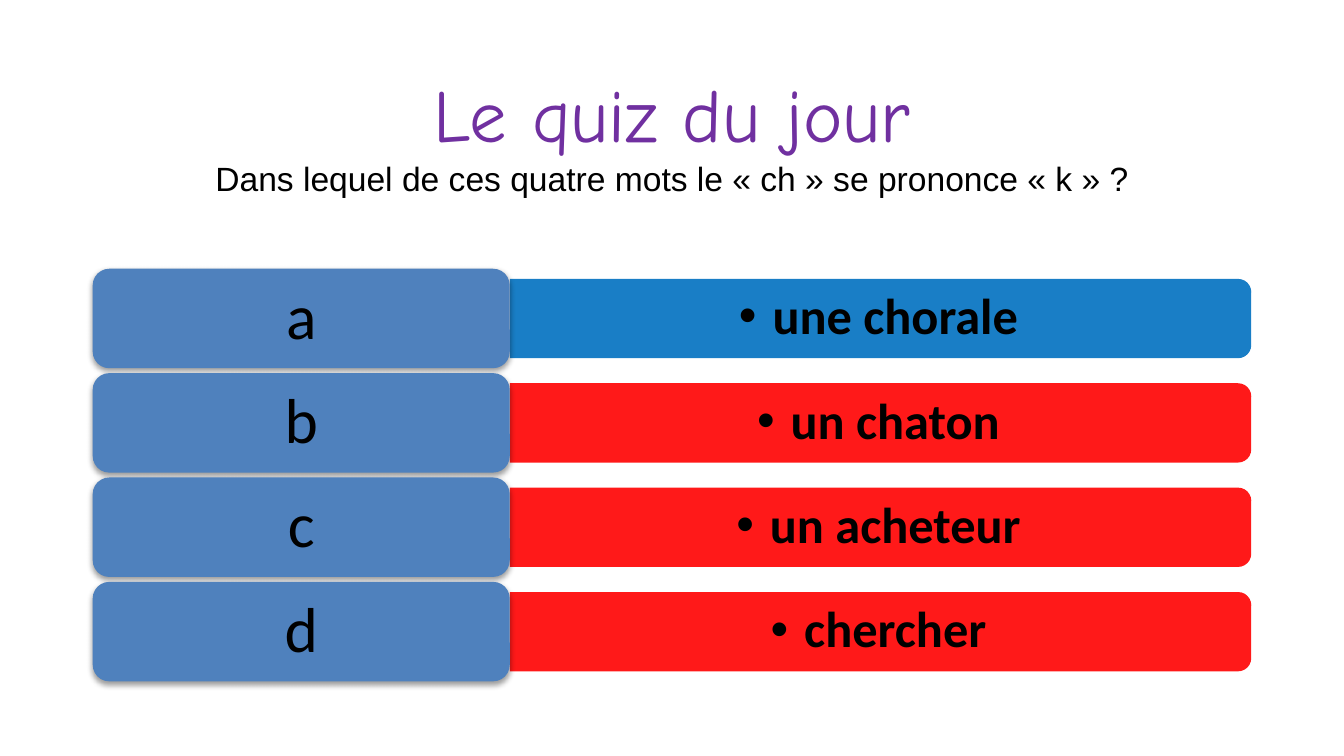
from lxml.etree import SubElement
from pptx import Presentation
from pptx.dml.color import RGBColor
from pptx.enum.shapes import MSO_SHAPE
from pptx.enum.text import MSO_ANCHOR, PP_ALIGN
from pptx.oxml.ns import qn
from pptx.util import Inches, Pt

PURPLE = RGBColor(0x70, 0x30, 0xA0)
BLACK = RGBColor(0, 0, 0)
STEEL = RGBColor(0x4F, 0x81, 0xBD)
BLUE = RGBColor(0, 0x70, 0xC0)
RED = RGBColor(0xFF, 0, 0)

WORDS = [
    ("a", "une chorale", BLUE),
    ("b", "un chaton", RED),
    ("c", "un acheteur", RED),
    ("d", "chercher", RED),
]


def add_block(slide, kind, box, color):
    block = slide.shapes.add_shape(kind, *map(Inches, box))
    block.shadow.inherit = False
    block.fill.solid()
    block.fill.fore_color.rgb = color
    block.line.fill.background()
    return block


def style_run(run, font, size, color=BLACK, bold=False):
    run.font.name = font
    run.font.size = Pt(size)
    run.font.color.rgb = color
    run.font.bold = bold


def set_text(shape, text, margin):
    frame = shape.text_frame
    frame.word_wrap = True
    frame.vertical_anchor = MSO_ANCHOR.MIDDLE
    frame.margin_left = frame.margin_right = Inches(margin)
    frame.margin_top = frame.margin_bottom = Inches(margin / 2)
    para = frame.paragraphs[0]
    para.text = text
    para.alignment = PP_ALIGN.CENTER
    return para


def add_bullet(para):
    para.level = 1
    props = para._p.get_or_add_pPr()
    props.set("marL", str(Inches(0.25)))
    props.set("indent", str(-Inches(0.25)))
    SubElement(props, qn("a:buFont"), typeface="Arial")
    SubElement(props, qn("a:buChar"), char="•")


def add_alpha(parent, percent):
    SubElement(parent, qn("a:alpha"), val=str(percent * 1000))


def add_shadow(shape):
    effect = shape._element.spPr.find(qn("a:effectLst"))
    shade = SubElement(effect, qn("a:outerShdw"), blurRad=str(Pt(3.1)),
                       dist=str(Pt(1.6)), dir="5400000", rotWithShape="0")
    add_alpha(SubElement(shade, qn("a:srgbClr"), val="000000"), 38)


def add_title(slide, box):
    title = slide.shapes.add_textbox(*map(Inches, box))
    para = set_text(title, "Le quiz du jour\vDans lequel de ces quatre mots "
                    "le « ch » se prononce « k » ?", 0.1)
    head, question = para.runs
    style_run(head, "Comic Neue", 40, PURPLE)
    style_run(question, "Arial", 18)


def add_answer(slide, box, word, color):
    left, top, width, height = box
    shift = (width - height) / 2
    bar = add_block(slide, MSO_SHAPE.ROUND_2_SAME_RECTANGLE,
                    (left + shift, top - shift, height, width), color)
    bar.rotation = 90
    add_alpha(bar._element.spPr.find(qn("a:solidFill"))[0], 90)
    label = slide.shapes.add_textbox(
        *map(Inches, (left, top + 0.03, width - 0.03, height - 0.06)))
    para = set_text(label, word, 0.11)
    para.line_spacing = 0.9
    add_bullet(para)
    style_run(para.runs[0], "Calibri", 27, bold=True)


def add_letter(slide, box, letter):
    key = add_block(slide, MSO_SHAPE.ROUNDED_RECTANGLE, box, STEEL)
    add_shadow(key)
    para = set_text(key, letter, 0.14)
    para.line_spacing = 0.9
    style_run(para.runs[0], "Calibri", 34)


def add_quiz(slide, box):
    left, top, width, height = box
    tall, thin, split = 0.74, 0.59, width * 0.36
    pitch = (height - tall) / (len(WORDS) - 1)
    for row, (letter, word, color) in enumerate(WORDS):
        y = top + row * pitch
        add_answer(slide, (left + split, y + (tall - thin) / 2,
                           width - split, thin), word, color)
        add_letter(slide, (left, y, split, tall), letter)


def main():
    deck = Presentation()
    deck.slide_width = Inches(10)
    deck.slide_height = deck.slide_width * 9 // 16
    slide = deck.slides.add_slide(deck.slide_layouts[6])
    add_title(slide, (0.69, 0.2, 8.62, 1.58))
    add_quiz(slide, (0.69, 2, 8.62, 3.07))
    deck.save("out.pptx")


if __name__ == "__main__":
    main()
